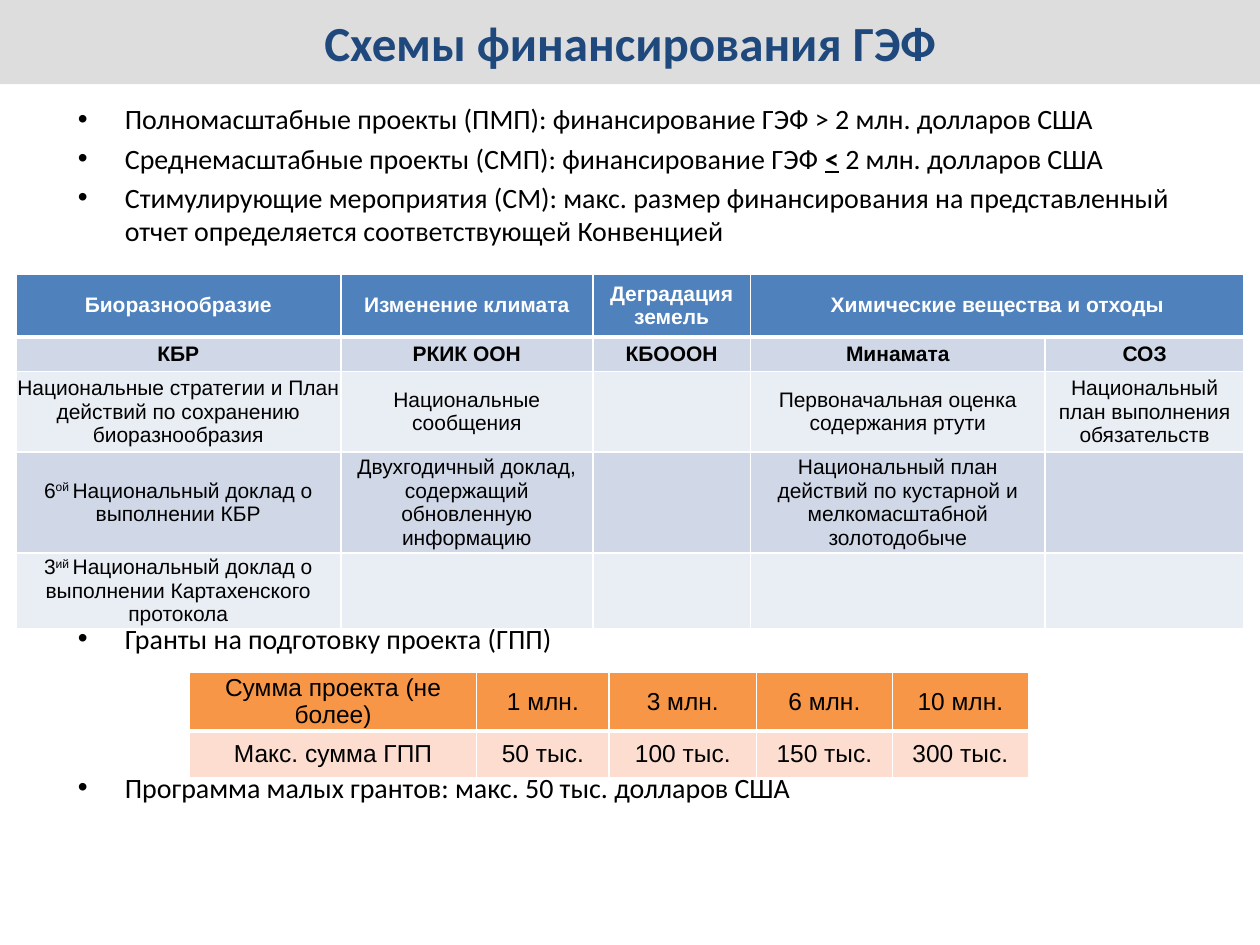
from dataclasses import dataclass

from lxml.etree import SubElement
from pptx import Presentation
from pptx.dml.color import RGBColor
from pptx.enum.shapes import MSO_SHAPE
from pptx.enum.text import MSO_ANCHOR, PP_ALIGN
from pptx.oxml.ns import qn
from pptx.util import Cm, Pt


@dataclass(frozen=True)
class Theme:
    """Colours, fonts and type sizes of the slide."""
    banner: str = "DDDDDD"
    title: str = "1F497D"
    text: str = "000000"
    white: str = "FFFFFF"
    blue: str = "4F81BD"
    blue_bands: tuple = ("D0D8E8", "E9EDF4")
    orange: str = "F79646"
    orange_bands: tuple = ("FCDDCF",)
    body_font: str = "Calibri"
    table_font: str = "Arial"
    title_size: int = 28
    body_size: int = 16
    activity_size: int = 12
    grant_size: int = 14


THEME = Theme()
MARK = "|"

ACTIVITIES = [
    ["Биоразнообразие", "Изменение климата", "Деградация земель", "Химические вещества и отходы", ""],
    ["КБР", "РКИК ООН", "КБОООН", "Минамата", "СОЗ"],
    ["Национальные стратегии и План действий по сохранению биоразнообразия",
     "Национальные сообщения", "", "Первоначальная оценка содержания ртути",
     "Национальный план выполнения обязательств"],
    ["6|ой |Национальный доклад о выполнении КБР",
     "Двухгодичный доклад, содержащий обновленную информацию", "",
     "Национальный план действий по кустарной и мелкомасштабной золотодобыче", ""],
    ["3|ий |Национальный доклад о выполнении Картахенского протокола", "", "", "", ""],
]
GRANTS = [
    ["Сумма проекта (не более)", "1 млн.", "3 млн.", "6 млн.", "10 млн."],
    ["Макс. сумма ГПП", "50 тыс.", "100 тыс.", "150 тыс.", "300 тыс."],
]
PROJECT_TYPES = [
    "Полномасштабные проекты (ПМП): финансирование ГЭФ > 2 млн. долларов США",
    "Среднемасштабные проекты (СМП): финансирование ГЭФ |<| 2 млн. долларов США",
    "Стимулирующие мероприятия (СМ): макс. размер финансирования на представленный "
    "отчет определяется соответствующей Конвенцией",
]


def underline(run):
    """Make a run bold and underlined."""
    run.font.bold = run.font.underline = True


def superscript(run):
    """Raise a run above the baseline."""
    run.font._element.set("baseline", "30000")


def write(paragraph, text, font, size, color, bold=False, accent=None):
    """Fill a paragraph, applying the accent to the marked pieces."""
    for index, piece in enumerate(text.split(MARK)):
        if not piece:
            continue
        run = paragraph.add_run()
        run.text = piece
        run.font.name = font
        run.font.size = Pt(size)
        run.font.bold = bold
        run.font.color.rgb = RGBColor.from_string(color)
        if index % 2:
            accent(run)


def add_banner(slide, text):
    """Add the title band across the top."""
    shape = slide.shapes.add_shape(MSO_SHAPE.RECTANGLE, 0, 0, Cm(25.4), Cm(1.7))
    shape.shadow.inherit = False
    shape.fill.solid()
    shape.fill.fore_color.rgb = RGBColor.from_string(THEME.banner)
    shape.line.fill.background()
    shape.text_frame.vertical_anchor = MSO_ANCHOR.MIDDLE
    paragraph = shape.text_frame.paragraphs[0]
    paragraph.alignment = PP_ALIGN.CENTER
    write(paragraph, text, THEME.body_font, THEME.title_size, THEME.title, bold=True)


def add_bullets(slide, top, height, items):
    """Add a bulleted list at the common left margin."""
    frame = slide.shapes.add_textbox(Cm(1.32), Cm(top), Cm(22.76), Cm(height)).text_frame
    frame.word_wrap = True
    for index, item in enumerate(items):
        paragraph = frame.add_paragraph() if index else frame.paragraphs[0]
        properties = paragraph._p.get_or_add_pPr()
        properties.set("marL", str(Cm(0.95)))
        properties.set("indent", str(-Cm(0.95)))
        SubElement(properties, qn("a:buFont"), typeface="Arial")
        SubElement(properties, qn("a:buChar"), char="•")
        if index:
            paragraph.space_before = Pt(0.2 * THEME.body_size)
        write(paragraph, item, THEME.body_font, THEME.body_size, THEME.text, accent=underline)


def set_borders(cell, top, bottom):
    """Draw white cell borders with the given top and bottom widths in points."""
    properties = cell._tc.get_or_add_tcPr()
    for side, width in (("L", 1), ("R", 1), ("T", top), ("B", bottom)):
        line = SubElement(properties, qn(f"a:ln{side}"), w=str(Pt(width)))
        SubElement(SubElement(line, qn("a:solidFill")), qn("a:srgbClr"), val=THEME.white)


def style_cell(cell, fill, top, bottom, side_margin, end_margin):
    """Set borders, fill, margins and anchor of a cell."""
    set_borders(cell, top, bottom)
    cell.fill.solid()
    cell.fill.fore_color.rgb = RGBColor.from_string(fill)
    cell.margin_left = cell.margin_right = Cm(side_margin)
    cell.margin_top = cell.margin_bottom = Cm(end_margin)
    cell.vertical_anchor = MSO_ANCHOR.MIDDLE


def add_grid(slide, left, top, widths, heights, rows, size, header_fill, bands,
             header_color, bold_rows=0, side_margin=0, header_margin=0):
    """Add a table with a header row and banded body rows."""
    table = slide.shapes.add_table(len(rows), len(widths), Cm(left), Cm(top),
                                   Cm(sum(widths)), Cm(sum(heights))).table
    table.first_row = table.horz_banding = False
    for column, width in zip(table.columns, widths):
        column.width = Cm(width)
    for index, (row, height, texts) in enumerate(zip(table.rows, heights, rows)):
        row.height = Cm(height)
        header = index == 0
        fill = header_fill if header else bands[(index - 1) % len(bands)]
        for cell, text in zip(row.cells, texts):
            style_cell(cell, fill, 3 if index == 1 else 1, 3 if header else 1,
                       side_margin, header_margin if header else 0)
            paragraph = cell.text_frame.paragraphs[0]
            paragraph.alignment = PP_ALIGN.CENTER
            write(paragraph, text, THEME.table_font, size,
                  header_color if header else THEME.text, index < bold_rows, superscript)
    return table


def main():
    """Build and save the slide."""
    presentation = Presentation()
    presentation.slide_width, presentation.slide_height = Cm(25.4), Cm(19.05)
    slide = presentation.slides.add_slide(presentation.slide_layouts[6])
    add_bullets(slide, 1.93, 3.2, PROJECT_TYPES)
    add_bullets(slide, 12.4, 0.95, ["Гранты на подготовку проекта (ГПП)"])
    add_bullets(slide, 15.4, 0.95, ["Программа малых грантов: макс. 50 тыс. долларов США"])
    add_banner(slide, "Схемы финансирования ГЭФ")
    add_grid(slide, 3.82, 13.55, [5.79, 2.67, 2.97, 2.74, 2.74], [0.97, 0.94], GRANTS,
             THEME.grant_size, THEME.orange, THEME.orange_bands, THEME.text, side_margin=0.25)
    activities = add_grid(slide, 0.32, 5.52, [6.55, 5.08, 3.18, 5.94, 4.01],
                          [1.12, 0.69, 1.63, 1.6, 1.12], ACTIVITIES, THEME.activity_size,
                          THEME.blue, THEME.blue_bands, THEME.white, bold_rows=2,
                          header_margin=0.13)
    activities.cell(0, 3).merge(activities.cell(0, 4))
    presentation.save("out.pptx")


if __name__ == "__main__":
    main()
